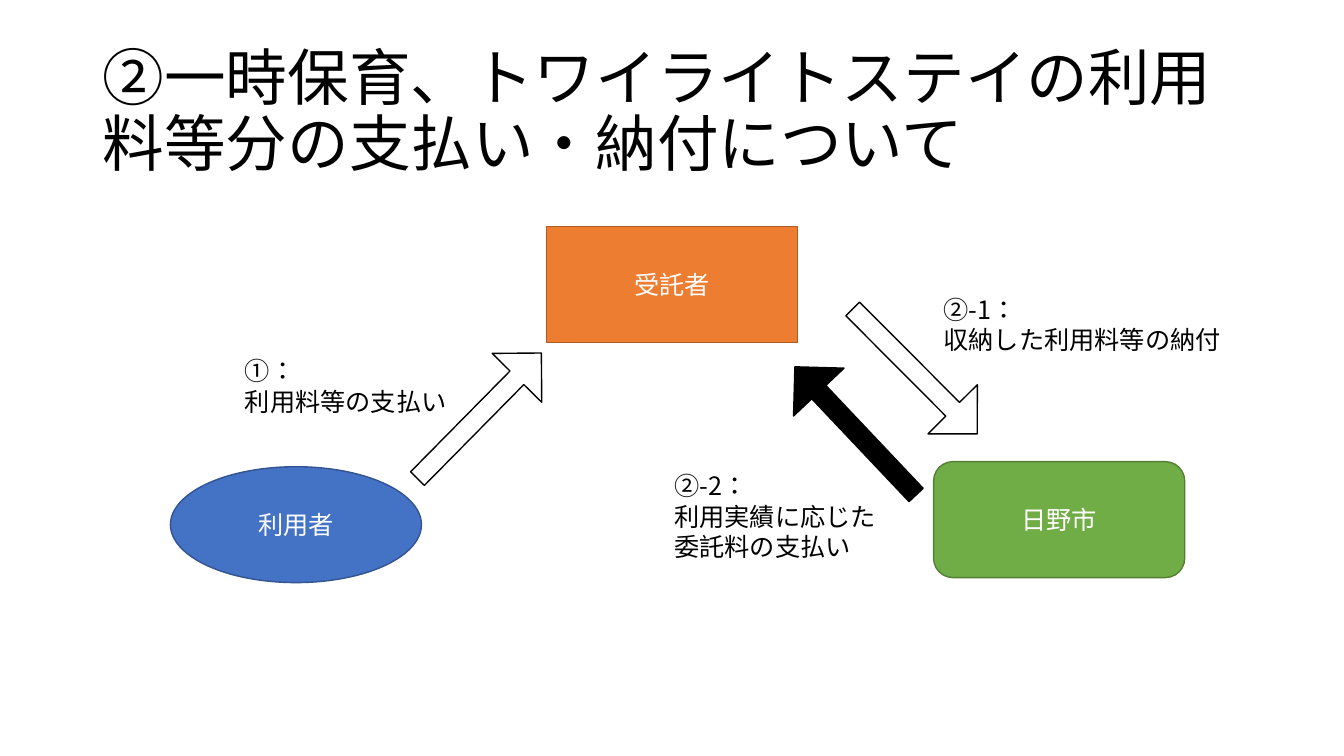
import pptx
import pptx.util
import pptx.dml.color
import pptx.enum.shapes
import pptx.enum.text
import pptx.oxml.ns
import lxml.etree

Inches = pptx.util.Inches
RGBColor = pptx.dml.color.RGBColor
KIND = pptx.enum.shapes.MSO_SHAPE
ALIGN = pptx.enum.text.PP_ALIGN
ANCHOR = pptx.enum.text.MSO_ANCHOR

FONT = "Noto Sans CJK JP"
BLACK = RGBColor(0x00, 0x00, 0x00)
WHITE = RGBColor(0xFF, 0xFF, 0xFF)
ORANGE = RGBColor(0xED, 0x7D, 0x31)
RUST = RGBColor(0xAF, 0x5C, 0x24)
GREEN = RGBColor(0x70, 0xAD, 0x47)
MOSS = RGBColor(0x53, 0x80, 0x35)
BLUE = RGBColor(0x44, 0x72, 0xC4)
NAVY = RGBColor(0x32, 0x54, 0x91)


def write(frame, text, size, color, align=ALIGN.LEFT):
    frame.word_wrap = True
    frame.text = text
    for para in frame.paragraphs:
        para.alignment = align
        for run in para.runs:
            run.font.size = pptx.util.Pt(size)
            run.font.color.rgb = color
            run.font.name = FONT
            east = lxml.etree.SubElement(run.font._element, pptx.oxml.ns.qn("a:ea"))
            east.set("typeface", FONT)


def add_text(slide, box, text, size=18):
    label = slide.shapes.add_textbox(*map(Inches, box))
    write(label.text_frame, text, size, BLACK)
    return label.text_frame


def add_title(slide, box, text):
    frame = add_text(slide, box, text, 44)
    frame.vertical_anchor = ANCHOR.MIDDLE
    frame.paragraphs[0].line_spacing = 0.9


def add_form(slide, kind, box, fill, edge):
    form = slide.shapes.add_shape(kind, *map(Inches, box))
    form.shadow.inherit = False
    form.fill.solid()
    form.fill.fore_color.rgb = fill
    form.line.color.rgb = edge
    form.line.width = pptx.util.Pt(1)
    return form


def add_party(slide, box, kind, text, fill, edge):
    form = add_form(slide, kind, box, fill, edge)
    form.text_frame.vertical_anchor = ANCHOR.MIDDLE
    write(form.text_frame, text, 18, WHITE, ALIGN.CENTER)


def add_arrow(slide, box, turn, fill):
    arrow = add_form(slide, KIND.RIGHT_ARROW, box, fill, BLACK)
    arrow.adjustments[0] = 0.278
    arrow.adjustments[1] = 0.5
    arrow.rotation = turn


def add_flow(slide, box):
    left, top = box[:2]
    parties = [
        (3.73, 0, KIND.RECTANGLE, "受託者", ORANGE, RUST),
        (7.57, 2.33, KIND.FLOWCHART_ALTERNATE_PROCESS, "日野市", GREEN, MOSS),
        (0, 2.38, KIND.OVAL, "利用者", BLUE, NAVY),
    ]
    for x, y, *style in parties:
        add_party(slide, (left + x, top + y, 2.49, 1.15), *style)

    arrows = [
        (2.19, 1.53, 314.6, WHITE),
        (6.51, 1.09, 45.1, WHITE),
        (5.92, 1.68, 226.6, BLACK),
    ]
    for x, y, turn, fill in arrows:
        add_arrow(slide, (left + x, top + y, 1.75, 0.69), turn, fill)

    labels = [
        (7.57, 0.62, 3.15, 0.71, "②-1：\n収納した利用料等の納付"),
        (4.9, 2.37, 2.43, 1.01, "②-2：\n利用実績に応じた委託料の支払い"),
        (0.64, 1.23, 2.43, 0.71, "①：\n利用料等の支払い"),
    ]
    for x, y, wide, high, text in labels:
        add_text(slide, (left + x, top + y, wide, high), text)


def main():
    deck = pptx.Presentation()
    deck.slide_width = Inches(13.33)
    deck.slide_height = Inches(7.5)
    slide = deck.slides.add_slide(deck.slide_layouts[6])
    add_title(slide, (0.92, 0.4, 11.5, 1.45),
              "②一時保育、トワイライトステイの利用料等分の支払い・納付について")
    add_flow(slide, (1.69, 2.25, 10.72, 3.53))
    deck.save("out.pptx")


if __name__ == "__main__":
    main()
